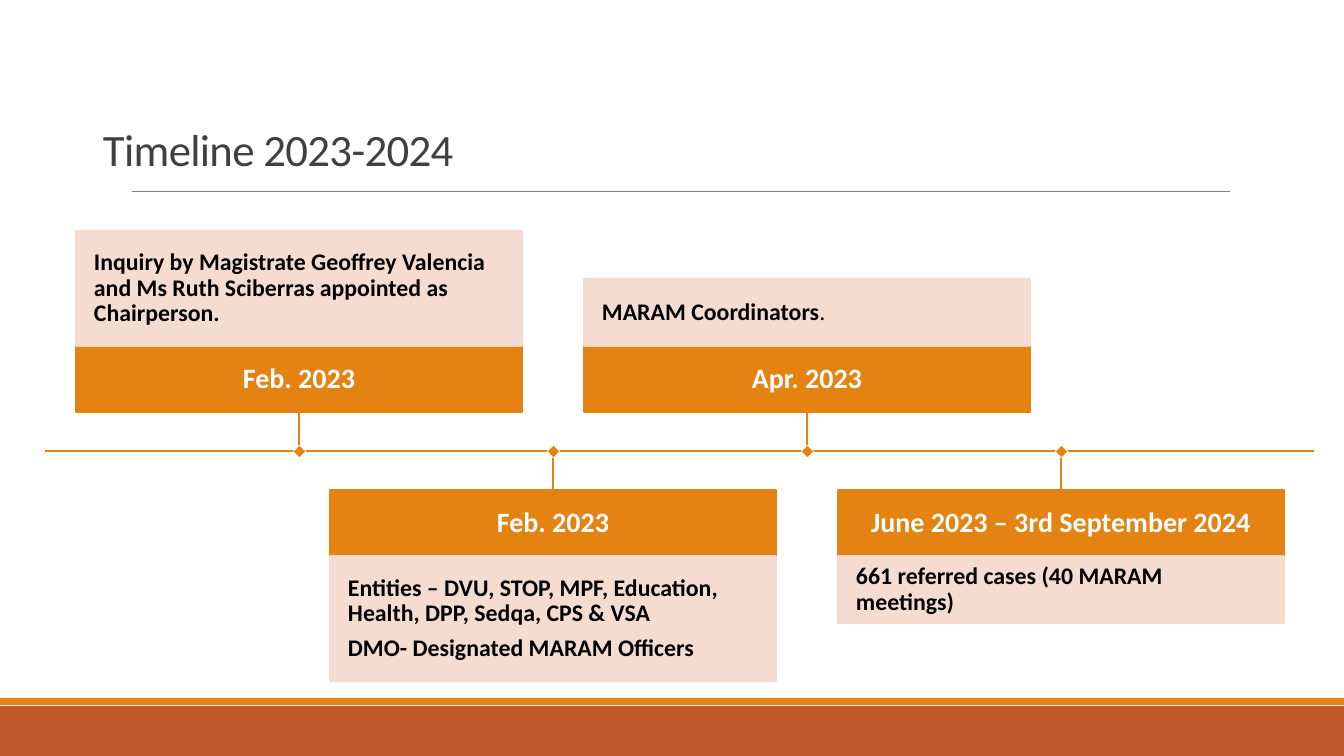
import pptx
import pptx.dml.color
import pptx.enum.shapes
import pptx.enum.text
import pptx.oxml.ns
import pptx.oxml.xmlchemy
import pptx.util

PX = 9071  # EMU in one px
ORANGE, RUST, BLUSH, WHITE = "E48312", "BD582C", "F5D9CC", "FFFFFF"
CARD_LEFT, CARD_STEP, CARD_WIDTH = 76, 254, 446
HEAD_HEIGHT, HEAD_ABOVE, HEAD_BELOW = 66, 346, 490
AXIS = 451
MARKER = 9

color = pptx.dml.color.RGBColor.from_string
new_element = pptx.oxml.xmlchemy.OxmlElement
align = pptx.enum.text.PP_ALIGN
anchor = pptx.enum.text.MSO_ANCHOR

title_format = {"size": pptx.util.Pt(32), "name": "Calibri", "bold": False}
head_format = {"size": pptx.util.Pt(20), "name": "Calibri", "bold": True}
body_format = {"size": pptx.util.Pt(17), "name": "Calibri", "bold": True}

# date, body height, paragraphs
events = [
    ("Feb. 2023", 115, ["Inquiry by Magistrate Geoffrey Valencia and Ms Ruth "
                        "Sciberras appointed as Chairperson."]),
    ("Feb. 2023", 125, ["Entities – DVU, STOP, MPF, Education, Health, DPP, Sedqa, CPS & VSA",
                        "DMO- Designated MARAM Officers"]),
    ("Apr. 2023", 67, ["MARAM Coordinators"]),
    ("June 2023 – 3rd September 2024", 67, ["661 referred cases (40 MARAM meetings)"]),
]

deck = pptx.Presentation()
deck.slide_width, deck.slide_height = 1344 * PX, 756 * PX
page = deck.slides.add_slide(deck.slide_layouts[6])


def draw_box(left, top, width, height, fill, outline=None, weight=1.25, opacity=100):
    box = page.shapes.add_shape(pptx.enum.shapes.MSO_SHAPE.RECTANGLE,
                                left * PX, top * PX, width * PX, height * PX)
    box.shadow.inherit = False
    box.fill.solid()
    box.fill.fore_color.rgb = color(fill)
    if outline:
        box.line.color.rgb = color(outline)
        box.line.width = pptx.util.Pt(weight)
    else:
        box.line.fill.background()
    if opacity < 100:
        for paint in box._element.spPr.iter(pptx.oxml.ns.qn("a:srgbClr")):
            alpha = new_element("a:alpha")
            alpha.set("val", str(opacity * 1000))
            paint.append(alpha)
    return box


def write_text(box, texts, font, ink, inset, vertical, horizontal, leading, after):
    """Fill the box with one paragraph per text and return the frame."""
    frame = box.text_frame
    frame.word_wrap = True
    frame.vertical_anchor = vertical
    for side in ("left", "top", "right", "bottom"):
        setattr(frame, "margin_" + side, inset * PX)
    for index, text in enumerate(texts):
        para = frame.add_paragraph() if index else frame.paragraphs[0]
        para.alignment = horizontal
        para.line_spacing = leading
        para.space_after = pptx.util.Pt(after)
        span = para.add_run()
        span.text = text
        span.font.color.rgb = color(ink)
        for key, value in font.items():
            setattr(span.font, key, value)
    return frame


# Footer bands and title
draw_box(0, 706, 1344, 50, RUST)
draw_box(0, 698, 1344, 7, ORANGE)
title = page.shapes.add_textbox(93 * PX, 40 * PX, 1159 * PX, 146 * PX)
title_frame = write_text(title, ["Timeline 2023-2024"], title_format, "404040", 10,
                         anchor.BOTTOM, align.LEFT, 0.85, 0)
title_frame.paragraphs[0].runs[0].font._element.set("spc", "-50")

# Title rule, time axis and a stem for each event
centers = [CARD_LEFT + CARD_STEP * index + CARD_WIDTH // 2 for index in range(len(events))]
lines = [(132, 191, 1230, 191, "808080", 0.5), (45, AXIS, 1314, AXIS, ORANGE, 1.25)]
for index, center in enumerate(centers):
    stem_end = HEAD_BELOW if index % 2 else HEAD_ABOVE + HEAD_HEIGHT
    lines.append((center, AXIS, center, stem_end, ORANGE, 1))
for x1, y1, x2, y2, ink, weight in lines:
    line = page.shapes.add_connector(pptx.enum.shapes.MSO_CONNECTOR.STRAIGHT,
                                     x1 * PX, y1 * PX, x2 * PX, y2 * PX)
    line.line.color.rgb = color(ink)
    line.line.width = pptx.util.Pt(weight)
    line._element.spPr.append(new_element("a:effectLst"))

# Event cards alternate above and below the axis
for index, (date, body_height, texts) in enumerate(events):
    left = CARD_LEFT + CARD_STEP * index
    below = index % 2
    head_top = HEAD_BELOW if below else HEAD_ABOVE
    body_top = head_top + HEAD_HEIGHT if below else head_top - body_height
    head = draw_box(left, head_top, CARD_WIDTH, HEAD_HEIGHT, ORANGE, ORANGE)
    write_text(head, [date], head_format, WHITE, 11, anchor.MIDDLE, align.CENTER, 0.9, 7)
    body = draw_box(left, body_top, CARD_WIDTH, body_height, BLUSH, BLUSH, opacity=90)
    frame = write_text(body, texts, body_format, "000000", 18,
                       anchor.MIDDLE, align.LEFT, 0.9, 6)
    if date == "Apr. 2023":
        period = frame.paragraphs[0].add_run()
        period.text = "."
        period.font.color.rgb = color("000000")
        for key, value in {**body_format, "bold": False}.items():
            setattr(period.font, key, value)

for center in centers:
    marker = draw_box(center - MARKER // 2, AXIS - MARKER // 2, MARKER, MARKER,
                      ORANGE, WHITE, 0.5)
    marker.rotation = 45

deck.save("out.pptx")
